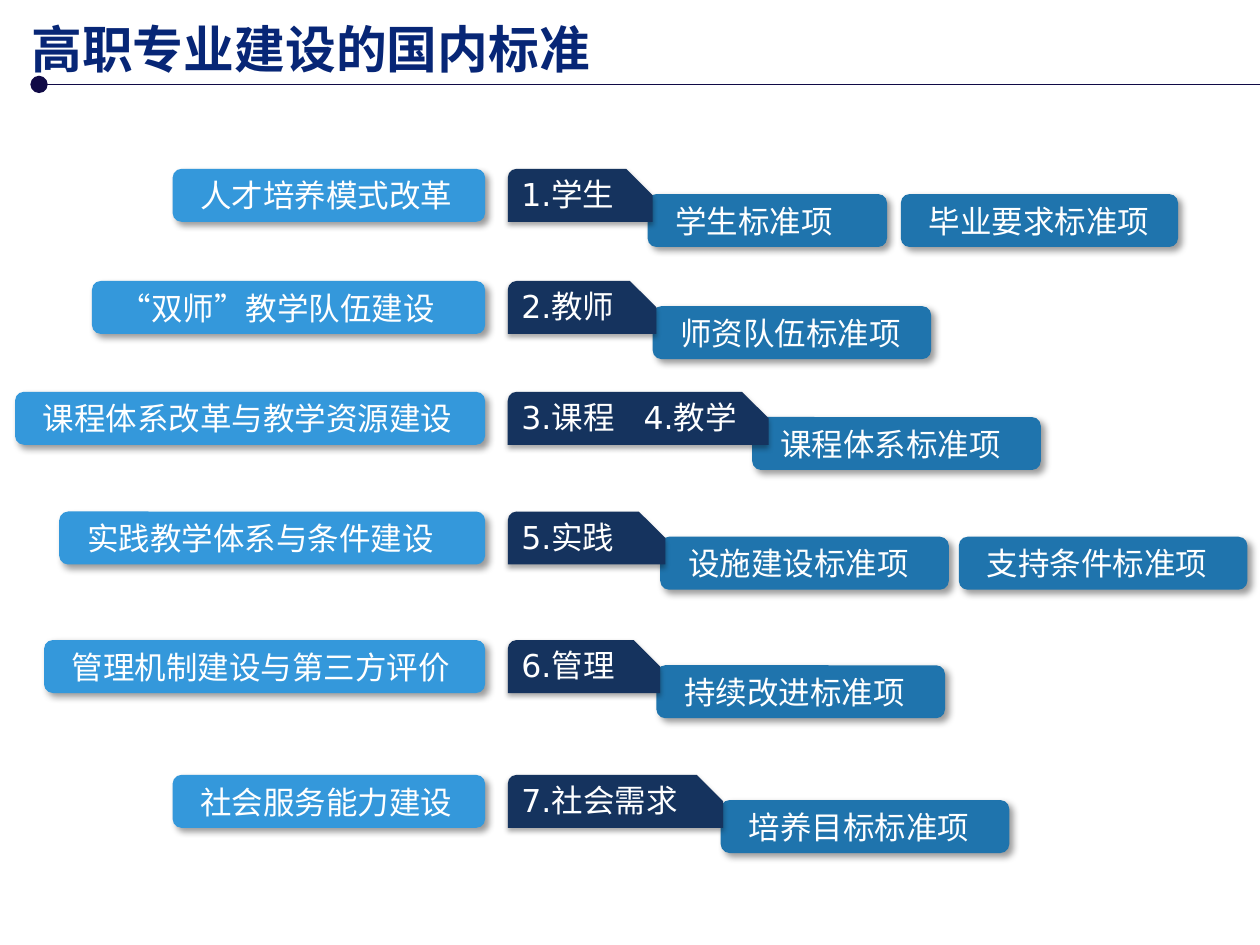
from dataclasses import dataclass

from lxml import etree
from pptx import Presentation
from pptx.dml.color import RGBColor
from pptx.enum import shapes, text
from pptx.oxml import ns
from pptx.util import Inches, Pt

NAVY, BLUE, SKY, WHITE = "15335E", "1F74AD", "3498DB", "FFFFFF"
TITLE_COLOUR, RULE_COLOUR = "072676", "100A46"
BODY_FONT, TITLE_FONT = "DejaVu Sans", "Noto Sans CJK SC"

BOX_HEIGHT = 0.42
REFORM_RIGHT = 3.85
TAB_LEFT = 4.03
STANDARD_DROP = 0.2
SECOND_TAB_STOP = 0.97


@dataclass(frozen=True)
class Standard:
    label: str
    left: float
    width: float = 2.29


@dataclass(frozen=True)
class Row:
    top: float
    reform: str
    reform_width: float
    topic: str
    topic_width: float
    standards: tuple[Standard, ...]


@dataclass(frozen=True)
class Shadow:
    alpha: int
    blur: float
    distance: float
    direction: int


BOX_SHADOW = Shadow(alpha=40, blur=4, distance=3, direction=45)
TAB_SHADOW = Shadow(alpha=35, blur=3.1, distance=1.8, direction=90)

ROWS = (
    Row(1.34, "人才培养模式改革", 2.48, "1.学生", 1.15,
        (Standard("学生标准项", 5.14, 1.9), Standard("毕业要求标准项", 7.15, 2.2))),
    Row(2.23, "“双师”教学队伍建设", 3.12, "2.教师", 1.18,
        (Standard("师资队伍标准项", 5.18, 2.21),)),
    Row(3.11, "课程体系改革与教学资源建设", 3.73, "3.课程\t4.教学", 2.07,
        (Standard("课程体系标准项", 5.97),)),
    Row(4.06, "实践教学体系与条件建设", 3.38, "5.实践", 1.25,
        (Standard("设施建设标准项", 5.24), Standard("支持条件标准项", 7.61))),
    Row(5.08, "管理机制建设与第三方评价", 3.5, "6.管理", 1.21,
        (Standard("持续改进标准项", 5.21),)),
    Row(6.15, "社会服务能力建设", 2.48, "7.社会需求", 1.71,
        (Standard("培养目标标准项", 5.72),)),
)


def rgb(colour: str) -> RGBColor:
    return RGBColor.from_string(colour)


def add_child(parent, tag: str, **attributes):
    return etree.SubElement(parent, ns.qn(tag),
                            {key: str(value) for key, value in attributes.items()})


def cast_shadow(shape, shadow: Shadow) -> None:
    shape.shadow.inherit = False
    effects = shape._element.spPr.find(ns.qn("a:effectLst"))
    outer = add_child(effects, "a:outerShdw", blurRad=Pt(shadow.blur),
                      dist=Pt(shadow.distance), dir=shadow.direction * 60000,
                      algn="tl", rotWithShape=0)
    black = add_child(outer, "a:srgbClr", val="000000")
    add_child(black, "a:alpha", val=shadow.alpha * 1000)


def write(shape, words: str, size: float, font: str, colour: str,
          margins: tuple[float, float], bold: bool = False,
          anchor=text.MSO_ANCHOR.TOP) -> None:
    """Fill a shape with one left-aligned line; margins are (sides, top and bottom)."""
    frame = shape.text_frame
    frame.word_wrap = True
    frame.auto_size = text.MSO_AUTO_SIZE.SHAPE_TO_FIT_TEXT
    frame.vertical_anchor = anchor
    frame.margin_left = frame.margin_right = Inches(margins[0])
    frame.margin_top = frame.margin_bottom = Inches(margins[1])
    paragraph = frame.paragraphs[0]
    paragraph.add_run().text = words
    paragraph.alignment = text.PP_ALIGN.LEFT
    if "\t" in words:
        stops = add_child(paragraph._p.get_or_add_pPr(), "a:tabLst")
        add_child(stops, "a:tab", pos=Inches(SECOND_TAB_STOP), algn="l")
    paragraph.font.size = Pt(size)
    paragraph.font.name = font
    paragraph.font.bold = bold
    paragraph.font.color.rgb = rgb(colour)


def add_panel(parent, kind, left: float, top: float, width: float,
              fill: str, shadow: Shadow):
    panel = parent.add_shape(kind, Inches(left), Inches(top),
                             Inches(width), Inches(BOX_HEIGHT))
    panel.fill.solid()
    panel.fill.fore_color.rgb = rgb(fill)
    panel.line.fill.background()
    cast_shadow(panel, shadow)
    return panel


def add_box(slide, label: str, left: float, top: float, width: float, fill: str) -> None:
    box = add_panel(slide.shapes, shapes.MSO_SHAPE.ROUNDED_RECTANGLE,
                    left, top, width, fill, BOX_SHADOW)
    write(box, label, 18, BODY_FONT, WHITE, (0.2, 0.04))


def add_topic_tab(slide, row: Row) -> None:
    group = slide.shapes.add_group_shape().shapes
    add_panel(group, shapes.MSO_SHAPE.SNIP_ROUND_RECTANGLE, TAB_LEFT, row.top,
              row.topic_width, NAVY, TAB_SHADOW).adjustments[1] = 0.5
    topic = group.add_textbox(Inches(TAB_LEFT + 0.01), Inches(row.top),
                              Inches(row.topic_width + 0.08), Inches(0.4))
    write(topic, row.topic, 18, BODY_FONT, WHITE, (0.1, 0.05))


def add_row(slide, row: Row) -> None:
    for standard in row.standards:
        add_box(slide, standard.label, standard.left, row.top + STANDARD_DROP,
                standard.width, BLUE)
    add_box(slide, row.reform, REFORM_RIGHT - row.reform_width, row.top,
            row.reform_width, SKY)
    add_topic_tab(slide, row)


def add_heading(slide) -> None:
    rule = slide.shapes.add_connector(shapes.MSO_CONNECTOR.STRAIGHT, Inches(0.31),
                                      Inches(0.67), Inches(10), Inches(0.67))
    rule.line.color.rgb = rgb(RULE_COLOUR)
    rule.line.width = Pt(0.5)
    add_child(rule.line._get_or_add_ln(), "a:headEnd", type="oval", w="lg", len="lg")
    add_child(rule._element.spPr, "a:effectLst")
    title = slide.shapes.add_textbox(Inches(0.25), Inches(0.14),
                                     Inches(6.72), Inches(0.49))
    write(title, "高职专业建设的国内标准", 29, TITLE_FONT, TITLE_COLOUR, (0, 0),
          bold=True, anchor=text.MSO_ANCHOR.MIDDLE)


def main() -> None:
    presentation = Presentation()
    presentation.slide_width, presentation.slide_height = Inches(10), Inches(7.5)
    slide = presentation.slides.add_slide(presentation.slide_layouts[6])
    for row in ROWS:
        add_row(slide, row)
    add_heading(slide)
    presentation.save("out.pptx")


if __name__ == "__main__":
    main()
